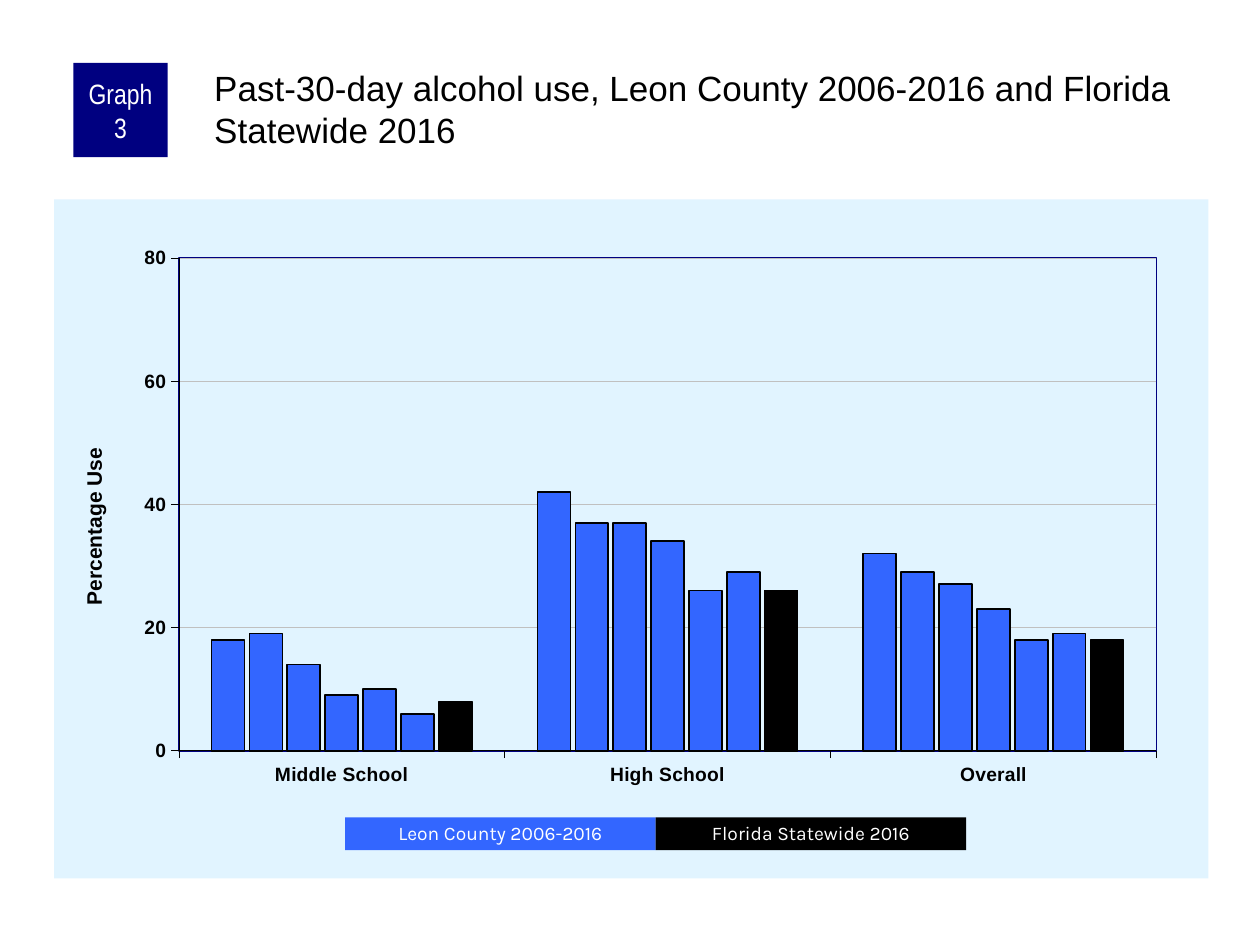
from dataclasses import dataclass

from lxml.etree import fromstring
from pptx import Presentation
from pptx.chart.data import CategoryChartData
from pptx.dml.color import RGBColor
from pptx.enum.chart import XL_CHART_TYPE, XL_TICK_LABEL_POSITION, XL_TICK_MARK
from pptx.enum.shapes import MSO_SHAPE
from pptx.enum.text import MSO_ANCHOR, PP_ALIGN
from pptx.util import Cm, Pt

COLORS = {
    "navy": "000080",
    "county": "3366FF",
    "state": "000000",
    "panel": "E1F4FF",
    "grid": "C0C0C0",
    "ink": "000000",
    "white": "FFFFFF",
}
NAMESPACES = (
    'xmlns:c="http://schemas.openxmlformats.org/drawingml/2006/chart" '
    'xmlns:a="http://schemas.openxmlformats.org/drawingml/2006/main"'
)
SCHOOLS = ("Middle School", "High School", "Overall")
SURVEYS = (
    (18, 42, 32),
    (19, 37, 29),
    (14, 37, 27),
    (9, 34, 23),
    (10, 26, 18),
    (6, 29, 19),
    (8, 26, 18),
)


@dataclass(frozen=True)
class Label:
    text: str
    left: float
    top: float
    width: float
    height: float
    font: str
    size: float
    fill: str | None = None
    color: str = "white"
    margins: tuple[float, float, float, float] = (0.25, 0.13, 0.25, 0.13)
    spacing: float = 1.0


LEGEND_LEFT, LEGEND_WIDTH = 6.96, 6.26
LEGEND = [
    Label(text, LEGEND_LEFT + i * LEGEND_WIDTH, 16.48, LEGEND_WIDTH, 0.66,
          "Karla", 11, fill=fill, spacing=0.9)
    for i, (text, fill) in enumerate(
        [("Leon County 2006-2016", "county"), ("Florida Statewide 2016", "state")])
]
HEADING = [
    Label("Graph 3", 1.48, 1.27, 1.9, 1.9, "Arial Narrow", 16,
          fill="navy", margins=(0.13, 0, 0.13, 0)),
    Label("Past-30-day alcohol use, Leon County 2006-2016 and Florida Statewide 2016",
          4.24, 1.27, 20.11, 2.12, "Arial", 20, color="ink",
          margins=(0.08, 0.08, 0, 0)),
]


def rgb(name: str) -> RGBColor:
    return RGBColor.from_string(COLORS[name])


def style_font(font, name: str, size: float, color: str, bold: bool = False) -> None:
    for key, value in {"name": name, "size": Pt(size), "bold": bold}.items():
        setattr(font, key, value)
    font.color.rgb = rgb(color)


def style_line(line, color: str, width: float) -> None:
    line.color.rgb = rgb(color)
    line.width = Pt(width)


def add_label(slide, label: Label) -> None:
    """Draw a filled, centred box, or a plain text box when there is no fill."""
    bounds = [Cm(v) for v in (label.left, label.top, label.width, label.height)]
    if label.fill:
        box = slide.shapes.add_shape(MSO_SHAPE.RECTANGLE, *bounds)
        box.shadow.inherit = False
        box.fill.solid()
        box.fill.fore_color.rgb = rgb(label.fill)
        box.line.fill.background()
    else:
        box = slide.shapes.add_textbox(*bounds)
    frame = box.text_frame
    frame.word_wrap = True
    frame.vertical_anchor = MSO_ANCHOR.MIDDLE if label.fill else MSO_ANCHOR.TOP
    for side, margin in zip(("left", "top", "right", "bottom"), label.margins):
        setattr(frame, f"margin_{side}", Cm(margin))
    paragraph = frame.paragraphs[0]
    paragraph.alignment = PP_ALIGN.CENTER if label.fill else PP_ALIGN.LEFT
    paragraph.line_spacing = label.spacing
    run = paragraph.add_run()
    run.text = label.text
    style_font(run.font, label.font, label.size, label.color)


def chart_xml(tag: str, content: str):
    return fromstring(f"<c:{tag} {NAMESPACES}>{content}</c:{tag}>")


def layout_xml(target: str = "", **fractions: float):
    """Build a manual layout from fractions of the chart's size."""
    modes = "".join(f'<c:{axis}Mode val="edge"/>' for axis in "xy")
    sizes = "".join(f'<c:{key} val="{value}"/>' for key, value in fractions.items())
    return chart_xml("layout", f"<c:manualLayout>{target}{modes}{sizes}</c:manualLayout>")


def drop_layout(parent) -> None:
    for layout in parent.findall("{*}layout"):
        parent.remove(layout)


def style_axis(axis) -> None:
    style_line(axis.format.line, "ink", 0.25)
    style_font(axis.tick_labels.font, "Arial", 11, "ink", bold=True)
    formats = {
        "major_tick_mark": XL_TICK_MARK.OUTSIDE,
        "minor_tick_mark": XL_TICK_MARK.NONE,
        "tick_label_position": XL_TICK_LABEL_POSITION.NEXT_TO_AXIS,
    }
    for key, value in formats.items():
        setattr(axis, key, value)


def style_value_axis(axis) -> None:
    for key, value in {"minimum_scale": 0, "maximum_scale": 80, "major_unit": 20}.items():
        setattr(axis, key, value)
    axis.has_major_gridlines = True
    style_line(axis.major_gridlines.format.line, "grid", 0.25)
    title = axis.axis_title
    run = title.text_frame.paragraphs[0].add_run()
    run.text = "Percentage Use"
    style_font(run.font, "Arial", 12, "ink", bold=True)
    element = title.text_frame._txBody.getparent().getparent()
    drop_layout(element)
    element.find("{*}tx").addnext(layout_xml(x=0.02, y=0.36))


def style_backgrounds(chart) -> None:
    """Place the plot area, frame it, and fill the panel behind the chart."""
    space = chart.element
    plot_area = space.find(".//{*}plotArea")
    drop_layout(plot_area)
    plot_area.insert(0, layout_xml('<c:layoutTarget val="inner"/>',
                                   x=0.108, y=0.086, w=0.847, h=0.726))
    plot_area.append(chart_xml("spPr", '<a:noFill/><a:ln w="12700"><a:solidFill>'
                               f'<a:srgbClr val="{COLORS["navy"]}"/></a:solidFill></a:ln>'))
    space.find("{*}chart").addnext(chart_xml(
        "spPr", f'<a:solidFill><a:srgbClr val="{COLORS["panel"]}"/></a:solidFill>'
        "<a:ln><a:noFill/></a:ln>"))


def add_use_chart(slide) -> None:
    use = CategoryChartData()
    use.categories = SCHOOLS
    for number, percentages in enumerate(SURVEYS, start=1):
        use.add_series(f"Series {number}", percentages)
    chart = slide.shapes.add_chart(XL_CHART_TYPE.COLUMN_CLUSTERED, Cm(1.09), Cm(4.02),
                                   Cm(23.27), Cm(13.69), use).chart
    chart.has_legend = False
    chart.has_title = False
    style_font(chart.font, "Arial", 8, "ink")
    columns = chart.plots[0]
    for key, value in {"gap_width": 200, "overlap": -15, "vary_by_categories": False}.items():
        setattr(columns, key, value)
    for number, series in enumerate(columns.series, start=1):
        series.format.fill.solid()
        series.format.fill.fore_color.rgb = rgb("state" if number == len(SURVEYS) else "county")
        style_line(series.format.line, "ink", 1)
    for axis in (chart.category_axis, chart.value_axis):
        style_axis(axis)
    style_value_axis(chart.value_axis)
    style_backgrounds(chart)


def main() -> None:
    deck = Presentation()
    deck.slide_width, deck.slide_height = Cm(25.4), Cm(19.05)
    slide = deck.slides.add_slide(deck.slide_layouts[6])
    add_use_chart(slide)
    for label in HEADING + LEGEND:
        add_label(slide, label)
    deck.save("out.pptx")


if __name__ == "__main__":
    main()
